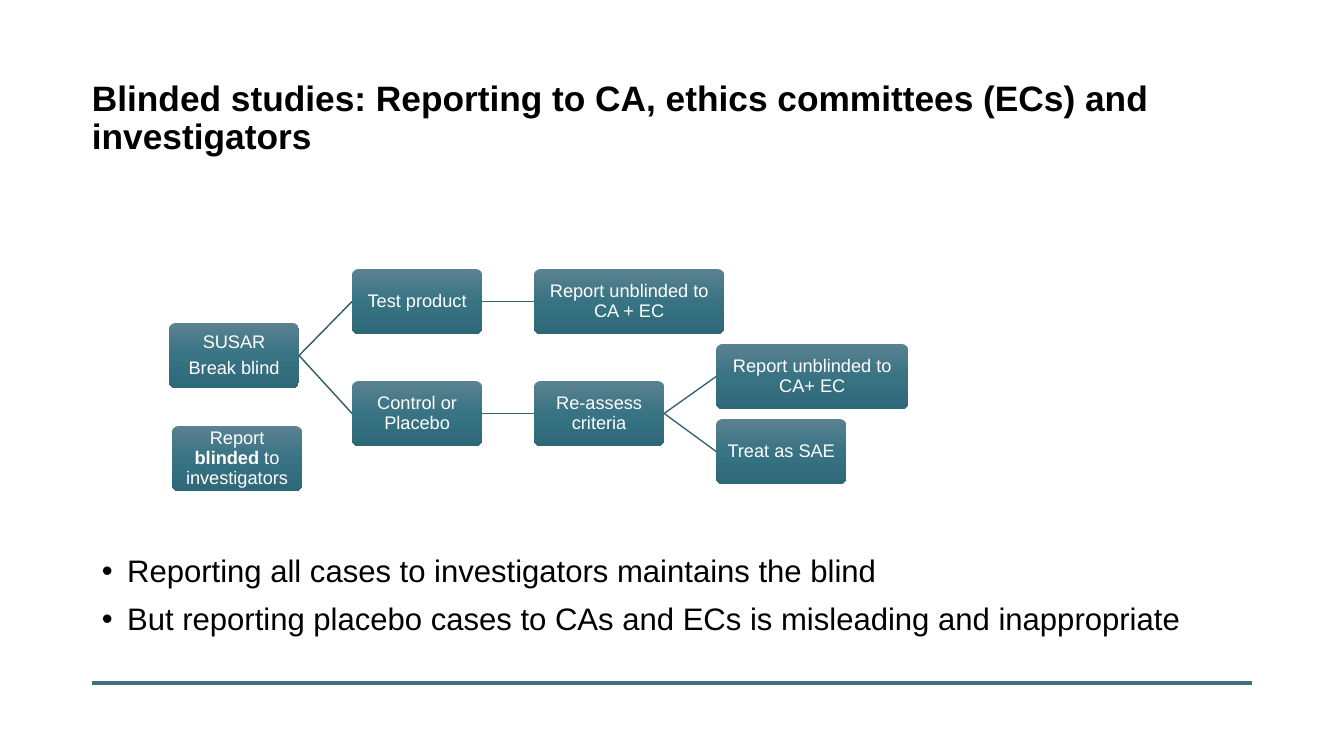
from copy import deepcopy

from lxml import etree
from pptx import Presentation
from pptx import util as u
from pptx.dml.color import RGBColor
from pptx.enum import shapes, text
from pptx.oxml.ns import qn

PX = 9071.43
BOX_HEIGHT = 65
GRADIENT = ["5B8290", "387384", "2E6879"]


def color(value):
    return RGBColor.from_string(value)


def add_spans(para, spans, size, ink):
    para.line_spacing = 0.9
    for words, bold in spans:
        span = para.add_run()
        span.text = words
        span.font.name = "Arial"
        span.font.size = u.Pt(size)
        span.font.bold = bold
        span.font.color.rgb = color(ink)


deck = Presentation()
deck.slide_width = u.Inches(13.33)
deck.slide_height = u.Inches(7.5)
page = deck.slides.add_slide(deck.slide_layouts[6])

title = [[("Blinded studies: Reporting to CA, ethics committees (ECs) and investigators", True)]]
bullets = [
    [("Reporting all cases to investigators maintains the blind", False)],
    [("But reporting placebo cases to CAs and ECs is misleading and inappropriate", False)],
]
for left, top, width, height, size, paragraphs, bulleted in [
    (82, 76, 1170, 88, 25.2, title, False),
    (92, 551, 1160, 95, 22.2, bullets, True),
]:
    box = page.shapes.add_textbox(*[round(n * PX) for n in (left, top, width, height)])
    frame = box.text_frame
    frame.word_wrap = True
    for index, spans in enumerate(paragraphs):
        para = frame.add_paragraph() if index else frame.paragraphs[0]
        if bulleted:
            props = para._p.get_or_add_pPr()
            props.set("marL", str(u.Inches(0.25)))
            props.set("indent", str(-u.Inches(0.25)))
            etree.SubElement(props, qn("a:buFont")).set("typeface", "Arial")
            etree.SubElement(props, qn("a:buChar")).set("char", "•")
        if index:
            para.space_before = u.Pt(10)
        add_spans(para, spans, size, "000000")

steps = {
    "susar": (169, 323, 130, [[("SUSAR", False)], [("Break blind", False)]]),
    "test": (352, 269, 130, [[("Test product", False)]]),
    "test report": (534, 269, 190, [[("Report unblinded to CA + EC", False)]]),
    "control": (352, 381, 130, [[("Control or Placebo", False)]]),
    "reassess": (534, 381, 130, [[("Re-assess criteria", False)]]),
    "control report": (716, 344, 192, [[("Report unblinded to CA+ EC", False)]]),
    "sae": (716, 419, 130, [[("Treat as SAE", False)]]),
    "investigators": (172, 426, 130, [[("Report ", False), ("blinded ", True), ("to investigators", False)]]),
}
boxes = {}
for name, (left, top, width, paragraphs) in steps.items():
    box = page.shapes.add_shape(
        shapes.MSO_SHAPE.ROUNDED_RECTANGLE,
        *[round(n * PX) for n in (left, top, width, BOX_HEIGHT)])
    boxes[name] = box
    box.adjustments[0] = 0.1
    box.shadow.inherit = False
    box.line.fill.background()
    box.fill.gradient()
    box.fill.gradient_angle = 270
    stop_list = box._element.spPr.find(qn("a:gradFill")).find(qn("a:gsLst"))
    stop_list.insert(1, deepcopy(stop_list[0]))
    for stop, position, shade in zip(box.fill.gradient_stops, (0, 0.5, 1), GRADIENT):
        stop.position = position
        stop.color.rgb = color(shade)
    frame = box.text_frame
    frame.word_wrap = True
    frame.vertical_anchor = text.MSO_ANCHOR.MIDDLE
    frame.margin_left = frame.margin_right = round(3 * PX)
    frame.margin_top = frame.margin_bottom = round(3 * PX)
    for index, spans in enumerate(paragraphs):
        para = frame.add_paragraph() if index else frame.paragraphs[0]
        para.alignment = text.PP_ALIGN.CENTER
        if index:
            para.space_before = u.Pt(4.55)
        add_spans(para, spans, 13, "FFFFFF")

footer_ends = [round(n * PX) for n in (92, 683, 1252, 683)]
rules = [(None, None, "3B7181", 3)]
rules += [("susar", target, "2F5A67", 1) for target in ("test", "control")]
rules += [(source, target, "366775", 1) for source, target in [
    ("test", "test report"), ("control", "reassess"),
    ("reassess", "control report"), ("reassess", "sae")]]
for source, target, shade, weight in rules:
    rule = page.shapes.add_connector(shapes.MSO_CONNECTOR.STRAIGHT, *footer_ends)
    if source:
        rule.begin_connect(boxes[source], 3)
        rule.end_connect(boxes[target], 1)
    rule.line.color.rgb = color(shade)
    rule.line.width = u.Pt(weight)
    etree.SubElement(rule._element.spPr, qn("a:effectLst"))

deck.save("out.pptx")
